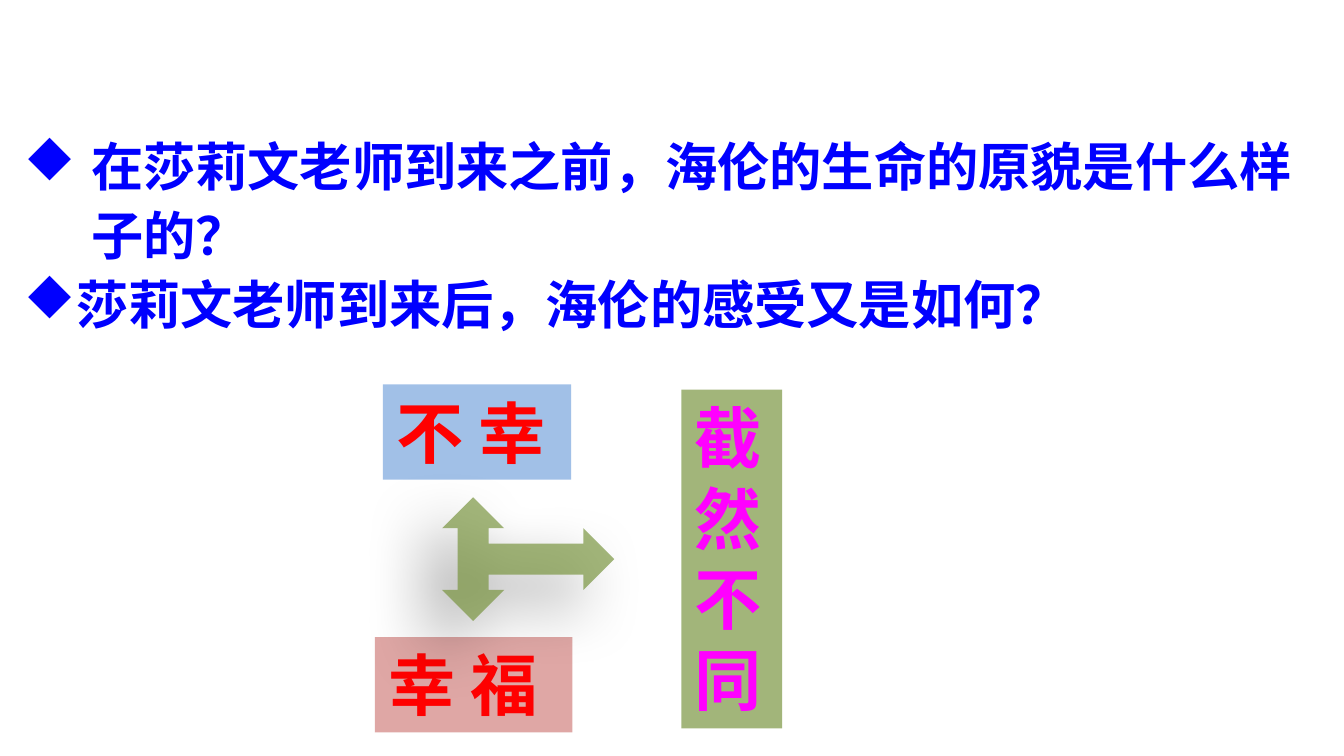
from lxml import etree
from pptx import Presentation
from pptx.dml.color import RGBColor
from pptx.enum.shapes import MSO_SHAPE
from pptx.enum.text import MSO_ANCHOR, MSO_AUTO_SIZE
from pptx.oxml.ns import qn
from pptx.util import Inches, Pt

ARROW = MSO_SHAPE.LEFT_RIGHT_UP_ARROW
MIDDLE = MSO_ANCHOR.MIDDLE
GROW = MSO_AUTO_SIZE.SHAPE_TO_FIT_TEXT

WHITE = RGBColor(0xFF, 0xFF, 0xFF)
BLUE = RGBColor(0x00, 0x00, 0xFF)
RED = RGBColor(0xFF, 0x00, 0x00)
MAGENTA = RGBColor(0xFF, 0x00, 0xFF)
GREEN = RGBColor(0x77, 0x93, 0x3C)
ROSE = RGBColor(0xC0, 0x50, 0x4D)
SKY = RGBColor(0x55, 0x8E, 0xD5)

CJK_FONT = "Noto Sans CJK SC"
LATIN_FONT = "Arial"
# The letter u is a diamond in the symbol font
BULLET_FONT, BULLET = "Wingdings", "u"

# Content: question and hanging indent in inches
QUESTIONS = [
    ("在莎莉文老师到来之前，海伦的生命的原貌是什么样子的？", 0.5),
    ("莎莉文老师到来后，海伦的感受又是如何？", 0.38),
]
QUESTION_BOX = (0.08, 0.73, 9.68, 1.99)

# Labels: lines, box, fill, opacity in percent, text colour, Latin font
LABELS = [
    (list("截然不同"), (5.07, 2.9, 0.75, 2.52), GREEN, 68, MAGENTA, CJK_FONT),
    (["幸 福"], (2.79, 4.74, 1.47, 0.71), ROSE, 50, RED, LATIN_FONT),
    (["不 幸"], (2.85, 2.86, 1.4, 0.71), SKY, 55, RED, LATIN_FONT),
]
ARROW_BOX = (3.47, 3.52, 0.92, 1.28)


def add_opacity(color_element, percent):
    etree.SubElement(color_element, qn("a:alpha"), val=str(percent * 1000))


def fill_shape(shape, color, opacity):
    shape.fill.solid()
    shape.fill.fore_color.rgb = color
    add_opacity(shape.fill._xPr.find(".//" + qn("a:srgbClr")), opacity)


def add_text_box(slide, box, lines, fill, opacity, size, color, font_name):
    shape = slide.shapes.add_textbox(*map(Inches, box))
    fill_shape(shape, fill, opacity)
    frame = shape.text_frame
    frame.word_wrap = True
    for index, line in enumerate(lines):
        paragraph = frame.add_paragraph() if index else frame.paragraphs[0]
        run = paragraph.add_run()
        run.text = line
        font = run.font
        font.name, font.size, font.bold = font_name, Pt(size), True
        font.color.rgb = color
        east_asian = etree.SubElement(run._r.get_or_add_rPr(), qn("a:ea"))
        east_asian.set("typeface", CJK_FONT)
    return frame


def add_bullet(paragraph, indent):
    paragraph.line_spacing = 1.1
    properties = paragraph._p.get_or_add_pPr()
    properties.set("marL", str(Inches(indent)))
    properties.set("indent", str(-Inches(indent)))
    etree.SubElement(properties, qn("a:buFont"), typeface=BULLET_FONT, charset="2")
    etree.SubElement(properties, qn("a:buChar"), char=BULLET)


def add_soft_shadow(shape, blur, distance, angle, opacity):
    shape.shadow.inherit = False
    effects = shape._element.spPr.find(qn("a:effectLst"))
    shadow = etree.SubElement(
        effects, qn("a:outerShdw"), blurRad=str(Pt(blur)), dist=str(Pt(distance)),
        dir=str(angle * 60000), algn="ctr", rotWithShape="0")
    add_opacity(etree.SubElement(shadow, qn("a:srgbClr"), val="000000"), opacity)


# Widescreen slide
presentation = Presentation()
presentation.slide_width = Inches(10)
presentation.slide_height = Inches(10 * 9 / 16)
slide = presentation.slides.add_slide(presentation.slide_layouts[6])

# Questions
questions = add_text_box(slide, QUESTION_BOX, [text for text, _ in QUESTIONS],
                         WHITE, 13, 28, BLUE, CJK_FONT)
questions.vertical_anchor = MIDDLE
for paragraph, (_, indent) in zip(questions.paragraphs, QUESTIONS):
    add_bullet(paragraph, indent)

# Contrasting labels
for lines, box, fill, opacity, color, font_name in LABELS:
    label = add_text_box(slide, box, lines, fill, opacity, 36, color, font_name)
    label.auto_size = GROW

# Three-way arrow linking the labels
arrow = slide.shapes.add_shape(ARROW, *map(Inches, ARROW_BOX))
arrow.rotation = 90
fill_shape(arrow, GREEN, 68)
arrow.line.fill.background()
add_soft_shadow(arrow, blur=35, distance=20, angle=135, opacity=50)

presentation.save("out.pptx")
